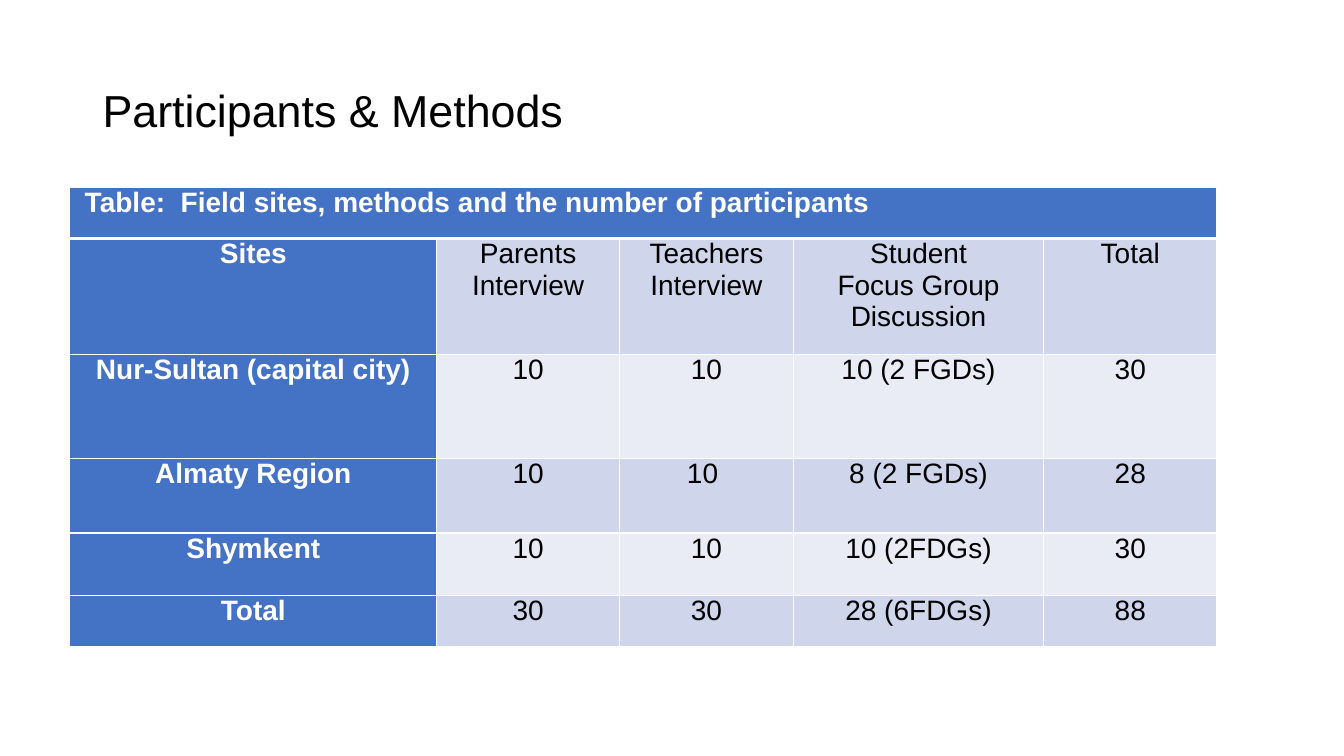
from dataclasses import dataclass

from lxml import etree
from pptx import Presentation
from pptx.dml.color import RGBColor
from pptx.enum.text import MSO_ANCHOR, PP_ALIGN
from pptx.oxml.ns import qn
from pptx.util import Cm, Pt

LEFT = PP_ALIGN.LEFT
CENTER = PP_ALIGN.CENTER
TOP = MSO_ANCHOR.TOP
MIDDLE = MSO_ANCHOR.MIDDLE
TITLE_ONLY = 5


@dataclass(frozen=True)
class Theme:
    font: str = "Arial"
    title_size: int = 32
    table_size: int = 20
    ink: str = "000000"
    paper: str = "FFFFFF"
    accent: str = "4472C4"
    bands: tuple = ("E9EBF5", "CFD5EA")
    grid_width: int = 1
    caption_rule_width: int = 3


THEME = Theme()

CAPTION = " Table:  Field sites, methods and the number of participants"
SITE_ROWS = [
    ["Sites", "Parents\nInterview", "Teachers\nInterview",
     "Student\nFocus Group Discussion", "Total"],
    ["Nur-Sultan (capital city)", "10", "10", "10 (2 FGDs)", "30"],
    ["Almaty Region", "10", "10 ", "8 (2 FGDs)", "28"],
    ["Shymkent", "10", "10", "10 (2FDGs)", "30"],
    ["Total", "30", "30", "28 (6FDGs)", "88"],
]
COLUMN_WIDTHS = [9.25, 4.6, 4.39, 6.3, 4.37]
ROW_HEIGHTS = [1.3, 2.92, 2.62, 1.88, 1.57, 1.3]


def write_text(frame, text, size, color, bold=False, align=LEFT):
    for index, line in enumerate(text.split("\n")):
        paragraph = frame.add_paragraph() if index else frame.paragraphs[0]
        paragraph.alignment = align
        run = paragraph.add_run()
        run.text = line
        run.font.name = THEME.font
        run.font.size = Pt(size)
        run.font.bold = bold
        run.font.color.rgb = RGBColor.from_string(color)


def add_title(slide, text):
    title = slide.shapes.title
    title.left, title.top = Cm(2.33), Cm(1.01)
    title.width, title.height = Cm(29.21), Cm(3.68)
    title.text_frame.vertical_anchor = MIDDLE
    write_text(title.text_frame, text, THEME.title_size, THEME.ink)
    title.text_frame.paragraphs[0].line_spacing = 0.9


def set_borders(cell, top, bottom):
    properties = cell._tc.get_or_add_tcPr()
    widths = {"a:lnL": THEME.grid_width, "a:lnR": THEME.grid_width,
              "a:lnT": top, "a:lnB": bottom}
    for tag, width in widths.items():
        line = etree.SubElement(properties, qn(tag), w=str(Pt(width)))
        fill = etree.SubElement(line, qn("a:solidFill"))
        etree.SubElement(fill, qn("a:srgbClr"), val=THEME.paper)


def format_cell(cell, fill, top, bottom):
    set_borders(cell, top, bottom)
    cell.fill.solid()
    cell.fill.fore_color.rgb = RGBColor.from_string(fill)
    cell.margin_left = cell.margin_right = Cm(0.18)
    cell.margin_top = cell.margin_bottom = 0
    cell.vertical_anchor = TOP


def add_participants_table(slide):
    table = slide.shapes.add_table(
        len(ROW_HEIGHTS), len(COLUMN_WIDTHS), Cm(1.76), Cm(4.71),
        Cm(sum(COLUMN_WIDTHS)), Cm(sum(ROW_HEIGHTS))).table
    for column, width in zip(table.columns, COLUMN_WIDTHS):
        column.width = Cm(width)
    for row, height in zip(table.rows, ROW_HEIGHTS):
        row.height = Cm(height)

    caption = table.cell(0, 0)
    caption.merge(table.cell(0, len(COLUMN_WIDTHS) - 1))
    for cell in table.rows[0].cells:
        format_cell(cell, THEME.accent, THEME.grid_width,
                    THEME.caption_rule_width)
    write_text(caption.text_frame, CAPTION, THEME.table_size, THEME.paper,
               bold=True)

    for row_index, values in enumerate(SITE_ROWS, start=1):
        top = THEME.caption_rule_width if row_index == 1 else THEME.grid_width
        for column_index, value in enumerate(values):
            is_site = column_index == 0
            fill = THEME.accent if is_site else THEME.bands[row_index % 2]
            color = THEME.paper if is_site else THEME.ink
            cell = table.cell(row_index, column_index)
            format_cell(cell, fill, top, THEME.grid_width)
            write_text(cell.text_frame, value, THEME.table_size, color,
                       bold=is_site, align=CENTER)


def main():
    deck = Presentation()
    deck.slide_width, deck.slide_height = Cm(33.87), Cm(19.05)
    slide = deck.slides.add_slide(deck.slide_layouts[TITLE_ONLY])
    add_title(slide, "Participants & Methods")
    add_participants_table(slide)
    deck.save("out.pptx")


if __name__ == "__main__":
    main()
